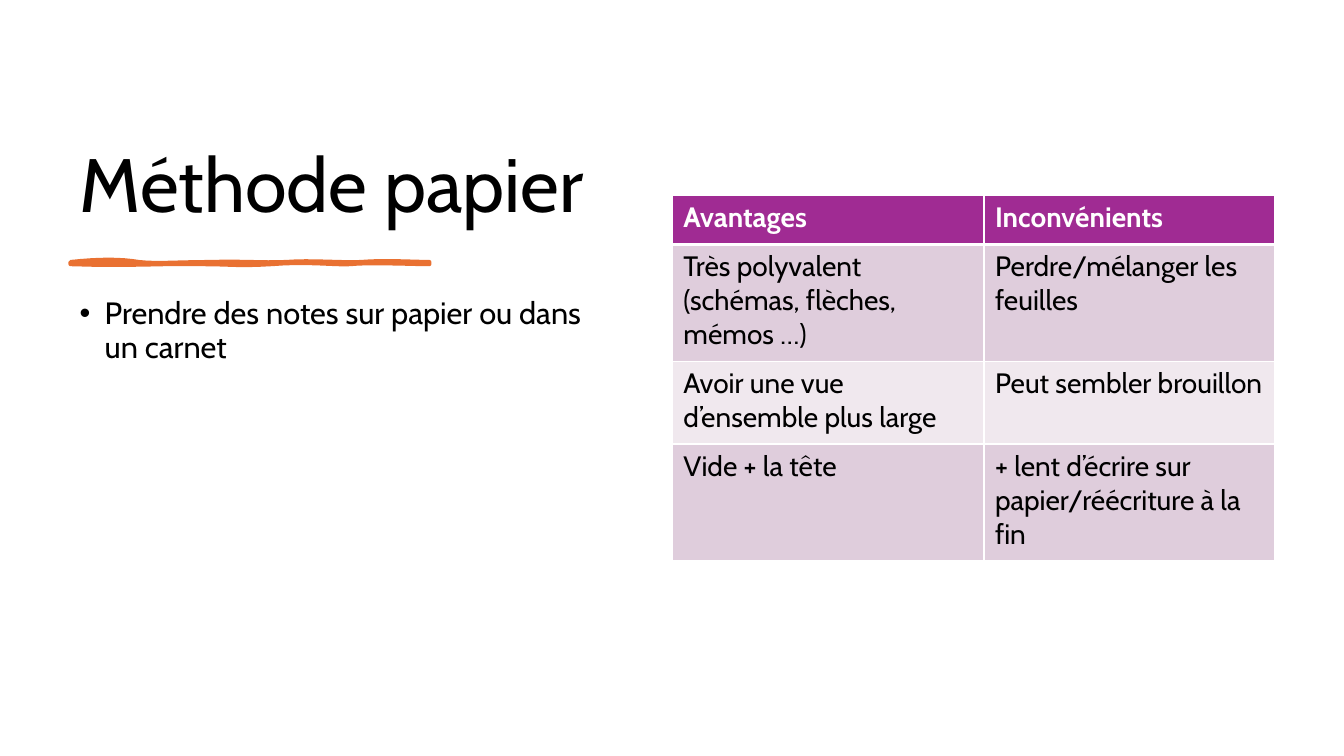
"""Build the slide on taking notes on paper."""
from dataclasses import dataclass

from lxml import etree
from pptx import Presentation
from pptx import util as u
from pptx.dml.color import RGBColor
from pptx.enum import text
from pptx.oxml import ns

FONT = "Cabin"
COLORS = {
    "ink": "000000",
    "white": "FFFFFF",
    "accent": "E97132",
    "header": "A02B93",
    "odd": "DFCDDC",
    "even": "F0E8EE",
}
SLIDE_WIDTH, SLIDE_HEIGHT = u.Inches(13.333), u.Inches(7.5)
LINE_SHARE, PADDING_SHARE = 4.47, 2.02
CURVE_STEPS = 8


@dataclass
class Area:
    """A rectangle in percent of the slide's width and height."""

    left: float
    top: float
    width: float
    height: float

    def emu(self) -> tuple[int, int, int, int]:
        """Return left, top, width and height in EMU."""
        return (across(self.left), down(self.top), across(self.width), down(self.height))


@dataclass
class Row:
    """A table row with its fill and the text lines it must hold."""

    cells: tuple[str, str]
    fill: str
    lines: int


TITLE = Area(5.18, 9.33, 39.53, 21.6)
BODY = Area(5.18, 38.8, 39.53, 51.73)
BRUSH = Area(5.25, 34.67, 26.7, 0.27)
TABLE_LEFT, TABLE_TOP = 50.03, 25.87
COLUMN_SHARES = (23.18, 21.6)
ROWS = (
    Row(("Avantages", "Inconvénients"), "header", 1),
    Row(("Très polyvalent (schémas, flèches, mémos …)", "Perdre/mélanger les feuilles"), "odd", 3),
    Row(("Avoir une vue d’ensemble plus large", "Peut sembler brouillon"), "even", 2),
    Row(("Vide + la tête", "+ lent d’écrire sur papier/réécriture à la fin"), "odd", 3),
)

BRUSH_CURVES = (
    ((0.08, -1.5), (0.14, -1.5), (0.19, 0)),
    ((0.24, 1), (0.3, 0), (0.39, 0)),
    ((0.48, -0.5), (0.53, 0.5), (0.6, 0)),
    ((0.67, -1), (0.76, 0.5), (0.81, 0)),
    ((0.87, -1), (0.96, 0), (1, 0)),
    ((1, 0), (1, 0.5), (1, 1)),
    ((0.95, 1), (0.83, 0), (0.78, 1)),
    ((0.74, 1.5), (0.66, -0.5), (0.56, 1)),
    ((0.46, 2), (0.45, 1), (0.36, 1)),
    ((0.27, 0.5), (0.17, 2), (0, 1)),
)


def across(share: float) -> int:
    """Turn a percentage of the slide's width into EMU."""
    return round(SLIDE_WIDTH * share / 100)


def down(share: float) -> int:
    """Turn a percentage of the slide's height into EMU."""
    return round(SLIDE_HEIGHT * share / 100)


def color(name: str) -> RGBColor:
    """Look up a named colour."""
    return RGBColor.from_string(COLORS[name])


def write(frame, words: str, *, size: float, ink: str = "ink", bold: bool = False,
          spacing: float = 1.0, before: float = 0, bullet: str = "") -> None:
    """Put one formatted paragraph into a text frame."""
    frame.word_wrap = True
    para = frame.paragraphs[0]
    para.line_spacing, para.space_before = spacing, u.Pt(before)
    span = para.add_run()
    span.text = words
    span.font.name, span.font.size, span.font.bold = FONT, u.Pt(size), bold
    span.font.color.rgb = color(ink)
    if bullet:
        properties = para._p.get_or_add_pPr()
        properties.set("marL", str(u.Inches(0.25)))
        properties.set("indent", str(-u.Inches(0.25)))
        etree.SubElement(properties, ns.qn("a:buFont"), typeface="Arial")
        etree.SubElement(properties, ns.qn("a:buChar"), char=bullet)


def add_text(page, area: Area, words: str, anchor: text.MSO_ANCHOR, **style) -> None:
    """Add a text box with one paragraph."""
    box = page.shapes.add_textbox(*area.emu())
    write(box.text_frame, words, **style)
    box.text_frame.vertical_anchor = anchor


def brush_points() -> list[tuple[int, int]]:
    """Sample the Bézier curves of the brush stroke."""
    left, top, width, height = BRUSH.emu()
    start, points = (0, 0), []
    for first, second, end in BRUSH_CURVES:
        for step in range(1, CURVE_STEPS + 1):
            t = step / CURVE_STEPS
            weights = ((1 - t) ** 3, 3 * t * (1 - t) ** 2, 3 * t ** 2 * (1 - t), t ** 3)
            x, y = (sum(w * p[axis] for w, p in zip(weights, (start, first, second, end)))
                    for axis in (0, 1))
            points.append((round(left + x * width), round(top + y * height)))
        start = end
    return points


def add_brush(page) -> None:
    """Draw the hand-drawn rule under the title."""
    left, top, _, _ = BRUSH.emu()
    builder = page.shapes.build_freeform(left, top, scale=1.0)
    builder.add_line_segments(brush_points(), close=True)
    brush = builder.convert_to_shape()
    brush.shadow.inherit = False
    brush.fill.solid()
    brush.fill.fore_color.rgb = color("accent")
    brush.line.color.rgb = color("accent")
    brush.line.width = u.Pt(3)
    etree.SubElement(brush.line._get_or_add_ln(), ns.qn("a:round"))


def add_borders(cell, top: float, bottom: float) -> None:
    """Give a cell white borders, with widths in points."""
    properties = cell._tc.get_or_add_tcPr()
    for index, (side, width) in enumerate((("L", 1), ("R", 1), ("T", top), ("B", bottom))):
        line = etree.Element(ns.qn(f"a:ln{side}"), w=str(u.Pt(width)))
        fill = etree.SubElement(line, ns.qn("a:solidFill"))
        etree.SubElement(fill, ns.qn("a:srgbClr"), val=COLORS["white"])
        properties.insert(index, line)


def add_comparison(page) -> None:
    """Add the table of advantages and drawbacks."""
    heights = [PADDING_SHARE + LINE_SHARE * row.lines for row in ROWS]
    area = Area(TABLE_LEFT, TABLE_TOP, sum(COLUMN_SHARES), sum(heights))
    table = page.shapes.add_table(len(ROWS), len(COLUMN_SHARES), *area.emu()).table
    table.horz_banding = False
    for column, share in zip(table.columns, COLUMN_SHARES):
        column.width = across(share)
    for index, row in enumerate(ROWS):
        table.rows[index].height = down(heights[index])
        is_header = index == 0
        for cell, words in zip(table.rows[index].cells, row.cells):
            cell.margin_left = cell.margin_right = u.Inches(0.11)
            cell.margin_top = cell.margin_bottom = u.Inches(0.05)
            cell.fill.solid()
            cell.fill.fore_color.rgb = color(row.fill)
            add_borders(cell, top=3 if index == 1 else 1, bottom=3 if is_header else 1)
            write(cell.text_frame, words, size=20, bold=is_header,
                  ink="white" if is_header else "ink")


def main() -> None:
    """Build and save the deck."""
    deck = Presentation()
    deck.slide_width, deck.slide_height = SLIDE_WIDTH, SLIDE_HEIGHT
    page = deck.slides.add_slide(deck.slide_layouts[6])
    add_text(page, TITLE, "Méthode papier", text.MSO_ANCHOR.BOTTOM, size=54, spacing=0.9)
    add_brush(page)
    add_text(page, BODY, "Prendre des notes sur papier ou dans un carnet",
             text.MSO_ANCHOR.TOP, size=22, spacing=0.9, before=10, bullet="•")
    add_comparison(page)
    deck.save("out.pptx")


if __name__ == "__main__":
    main()
